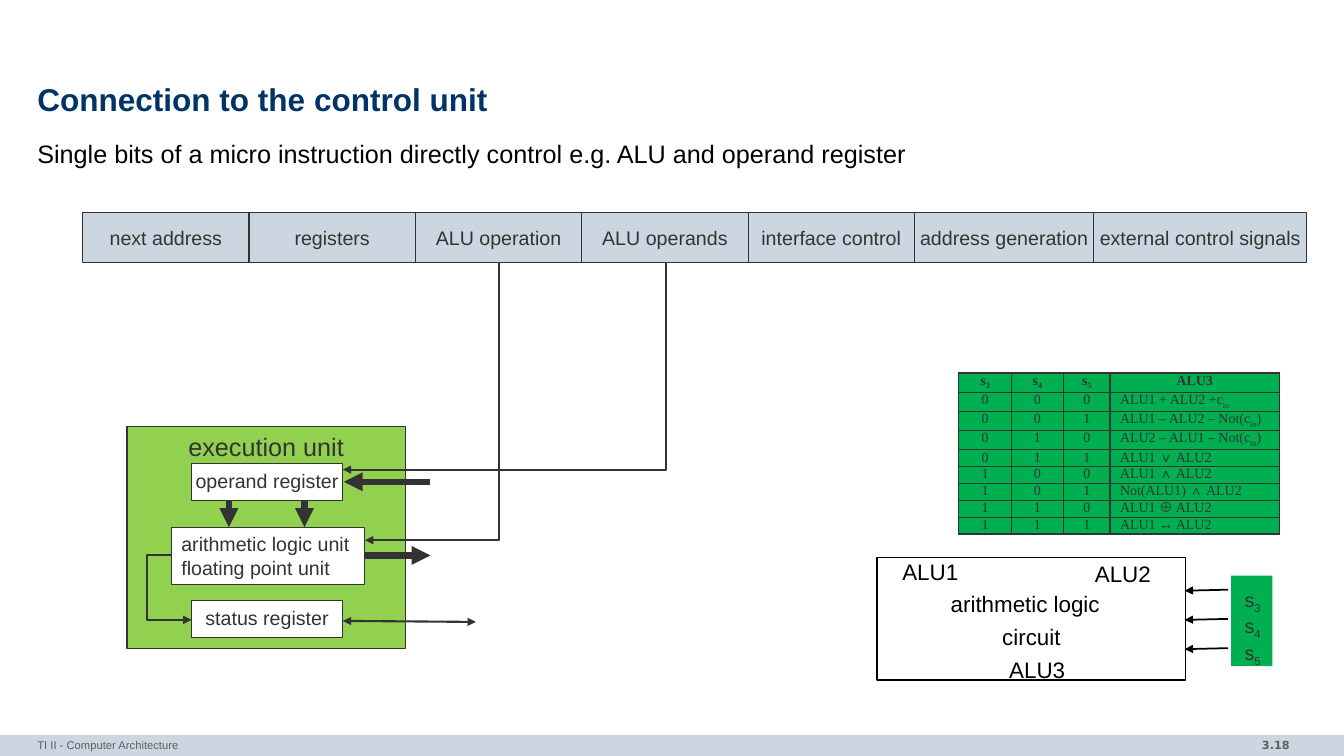
from itertools import accumulate

from lxml import etree
from pptx import Presentation
from pptx.dml.color import RGBColor
from pptx.enum.shapes import MSO_CONNECTOR as Connector, MSO_SHAPE as Shape
from pptx.enum.text import MSO_ANCHOR as Anchor, PP_ALIGN as Align
from pptx.oxml.ns import qn
from pptx.util import Inches, Pt

INK, BLACK, WHITE = "333333", "000000", "FFFFFF"
NAVY, GREY, PALE = "003366", "5F5F5F", "CCD6E0"
LIME, GREEN = "92D050", "00B050"


def color(hex_code):
    return RGBColor.from_string(hex_code)


def inches(values):
    return [Inches(value) for value in values]


class SlideBuilder:
    font = "Arial"

    def __init__(self, presentation):
        self.slide = presentation.slides.add_slide(presentation.slide_layouts[5])
        self.shapes = self.slide.shapes

    def add_runs(self, paragraph, text, size, hex_code=INK, bold=False,
                 align=Align.LEFT, font=None):
        """Parts of the text between tildes become subscripts."""
        paragraph.alignment = align
        for index, part in enumerate(text.split("~")):
            if not part:
                continue
            run = paragraph.add_run()
            run.text = part
            run.font.name = font or self.font
            run.font.size = Pt(size)
            run.font.bold = bold
            run.font.color.rgb = color(hex_code)
            if index % 2:
                run._r.get_or_add_rPr().set("baseline", "-25000")

    def fill_frame(self, frame, text, size, anchor=Anchor.TOP, wrap=False,
                   insets=(0.1, 0.05, 0.1, 0.05), **style):
        frame.word_wrap = wrap
        frame.vertical_anchor = anchor
        (frame.margin_left, frame.margin_top,
         frame.margin_right, frame.margin_bottom) = inches(insets)
        frame.text = "\n" * text.count("\n")
        for paragraph, line in zip(frame.paragraphs, text.split("\n")):
            self.add_runs(paragraph, line, size, **style)

    def title(self, text, box):
        title = self.shapes.title
        title.left, title.top, title.width, title.height = inches(box)
        self.fill_frame(title.text_frame, text, 22.5, Anchor.MIDDLE, True,
                        (0, 0, 0, 0), hex_code=NAVY, bold=True)
        title.text_frame.paragraphs[0].line_spacing = 0.85

    def text(self, text, box, size, insets=(0, 0, 0, 0), **style):
        text_box = self.shapes.add_textbox(*inches(box))
        self.fill_frame(text_box.text_frame, text, size, insets=insets, **style)

    def box(self, box, fill, line=INK, width=0.75, kind=Shape.RECTANGLE,
            text="", size=14, **style):
        shape = self.shapes.add_shape(kind, *inches(box))
        shape.shadow.inherit = False
        shape.fill.solid()
        shape.fill.fore_color.rgb = color(fill)
        if line:
            shape.line.color.rgb = color(line)
            shape.line.width = Pt(width)
        else:
            shape.line.fill.background()
        if text:
            self.fill_frame(shape.text_frame, text, size, **style)

    def arrow(self, start, end, width=1.5, line=INK, heads=("tailEnd",), bend=None):
        """A bend gives the place of the upright part as a share of the width."""
        kind = Connector.STRAIGHT if bend is None else Connector.ELBOW
        connector = self.shapes.add_connector(kind, *inches(start + end))
        connector.line.color.rgb = color(line)
        connector.line.width = Pt(width)
        properties = connector._element.spPr
        for head in heads:
            etree.SubElement(properties.find(qn("a:ln")), qn(f"a:{head}"),
                             type="triangle")
        etree.SubElement(properties, qn("a:effectLst"))
        if bend is not None:
            adjustments = properties.find(qn("a:prstGeom")).get_or_add_avLst()
            etree.SubElement(adjustments, qn("a:gd"), name="adj1",
                             fmla=f"val {round(bend * 100000)}")

    def table(self, rows, box, widths, row_height):
        frame = self.shapes.add_table(len(rows), len(widths), *inches(box))
        table = frame.table
        for column, width in zip(table.columns, widths):
            column.width = Inches(width)
        for row_index, values in enumerate(rows):
            table.rows[row_index].height = Inches(row_height)
            for column_index, value in enumerate(values):
                header = row_index == 0
                centred = header or column_index < len(widths) - 1
                cell = table.cell(row_index, column_index)
                cell.margin_left = cell.margin_right = Inches(0.1)
                cell.margin_top = cell.margin_bottom = 0
                self.add_runs(cell.text_frame.paragraphs[0], value, 10, bold=header,
                              align=Align.CENTER if centred else Align.LEFT,
                              font="Times New Roman")
                self.cell_borders(cell)
                cell.fill.solid()
                cell.fill.fore_color.rgb = color(GREEN)

    def cell_borders(self, cell):
        properties = cell._tc.get_or_add_tcPr()
        for side in ("lnL", "lnR", "lnT", "lnB"):
            border = etree.SubElement(properties, qn(f"a:{side}"), w=str(Pt(1)))
            solid = etree.SubElement(border, qn("a:solidFill"))
            etree.SubElement(solid, qn("a:srgbClr"), val=INK)


def main():
    presentation = Presentation()
    presentation.slide_width, presentation.slide_height = Inches(13.33), Inches(7.5)
    builder = SlideBuilder(presentation)

    # Footer band
    builder.box((0, 7.29, 13.33, 0.21), PALE, line=None)
    builder.text("3.18", (11.1, 7.28, 1.79, 0.23), 8, (0.1, 0.05, 0.1, 0.05), wrap=True,
                 hex_code=GREY, bold=True, align=Align.RIGHT, font="DejaVu Sans")
    builder.text("TI II - Computer Architecture", (0.37, 7.28, 8.72, 0.22), 8,
                 (0, 0.05, 0, 0.05), wrap=True, hex_code=GREY)

    # Title and lead sentence
    builder.title("Connection to the control unit", (0.37, 0.78, 12.6, 0.47))
    builder.text("Single bits of a micro instruction directly control "
                 "e.g. ALU and operand register",
                 (0.37, 1.37, 12.6, 0.4), 18, wrap=True, hex_code=BLACK)

    # Execution unit with its registers
    builder.box((1.26, 4.23, 2.76, 2.2), LIME, kind=Shape.FLOWCHART_PROCESS,
                text="execution unit", size=18, align=Align.CENTER)
    builder.box((1.7, 5.23, 1.92, 0.57), WHITE,
                text="arithmetic logic unit\nfloating point unit")
    for name, top in (("status register", 5.96), ("operand register", 4.6)):
        builder.box((1.9, top, 1.5, 0.37), WHITE, text=name, align=Align.CENTER)

    # Data paths
    for start, end in (((4.27, 4.78), (3.41, 4.78)), ((3.62, 5.51), (4.27, 5.51)),
                       ((2.27, 4.96), (2.27, 5.23)), ((3.02, 4.96), (3.02, 5.23))):
        builder.arrow(start, end, width=4.5)
    builder.arrow((1.7, 5.51), (1.9, 6.15), bend=-1.2)
    builder.arrow((3.4, 6.16), (4.72, 6.17), heads=("headEnd", "tailEnd"))

    # Fields of the micro instruction
    fields = ("next address", "registers", "ALU operation", "ALU operands",
              "interface control", "address generation", "external control signals")
    widths = [1.65] * 5 + [1.78, 2.11]
    for name, left, width in zip(fields, accumulate(widths, initial=0.82), widths):
        builder.box((left, 2.11, width, 0.49), PALE, text=name,
                    anchor=Anchor.MIDDLE, align=Align.CENTER)

    # Control lines from the fields to the execution unit
    for target, field in (((3.4, 4.66), (6.61, 2.6)), ((3.62, 5.36), (4.95, 2.6))):
        builder.arrow(target, field, heads=("headEnd",), bend=1)

    # Arithmetic logic circuit and its select signals
    builder.box((12.21, 5.71, 0.41, 0.9), GREEN, line=None)
    builder.box((8.7, 5.53, 3.06, 1.22), WHITE, line=BLACK, width=1.25)
    for top in (5.85, 6.14, 6.43):
        builder.arrow((12.18, top), (11.75, top + 0.01), width=1.25, line=BLACK)
    for label, left, top, width in (
            ("ALU1", 8.95, 5.54, 0.56), ("ALU2", 10.86, 5.56, 0.56),
            ("arithmetic logic", 9.43, 5.85, 1.5), ("circuit", 9.94, 6.18, 0.59),
            ("ALU3", 10.01, 6.51, 0.56)):
        builder.text(label, (left, top, width, 0.27), 16, hex_code=BLACK)

    # Function table
    functions = ("ALU1 + ALU2 +c~in~", "ALU1 – ALU2 – Not(c~in~)",
                 "ALU2 – ALU1 – Not(c~in~)", "ALU1 ∨ ALU2", "ALU1 ∧ ALU2",
                 "Not(ALU1) ∧ ALU2", "ALU1 ⊕ ALU2", "ALU1 ↔ ALU2")
    signals = ["s~3~", "s~4~", "s~5~"]
    rows = [signals + ["ALU3"]]
    rows += [[*f"{code:03b}", function] for code, function in enumerate(functions)]
    builder.table(rows, (9.51, 3.7, 3.18, 1.5), (0.52, 0.52, 0.46, 1.68), 0.14)
    builder.text("\n".join(signals), (12.24, 5.78, 0.37, 0.81), 14,
                 (0.1, 0.05, 0.1, 0.05), align=Align.CENTER)

    presentation.save("out.pptx")


if __name__ == "__main__":
    main()
